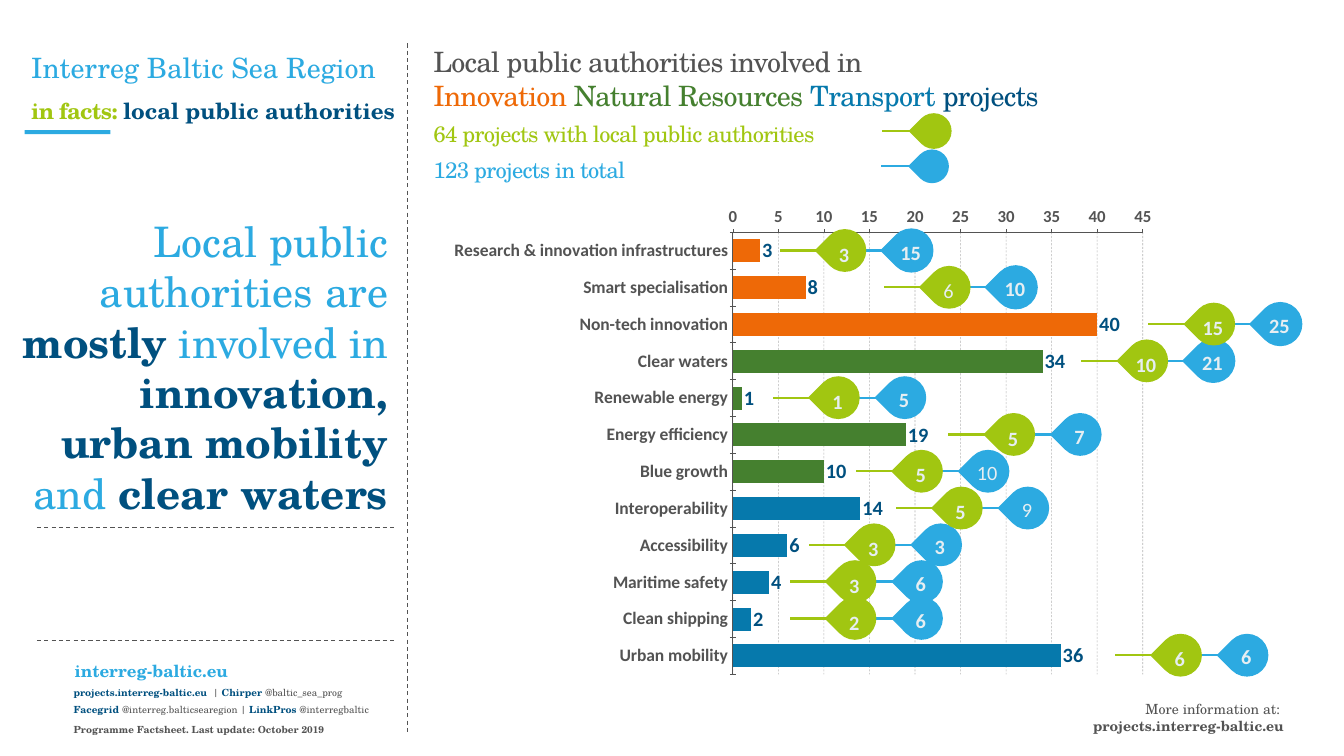
from lxml.etree import SubElement
from pptx import Presentation
from pptx.chart.data import CategoryChartData
from pptx.dml.color import RGBColor
from pptx.enum.chart import XL_CHART_TYPE, XL_LABEL_POSITION, XL_TICK_MARK
from pptx.enum.dml import MSO_LINE
from pptx.enum.shapes import MSO_CONNECTOR, MSO_SHAPE
from pptx.enum.text import MSO_ANCHOR, MSO_AUTO_SIZE, PP_ALIGN
from pptx.oxml import parse_xml
from pptx.oxml.ns import nsdecls, qn
from pptx.util import Inches, Pt

SKY = RGBColor(0x2C, 0xAA, 0xE1)
NAVY = RGBColor(0x00, 0x50, 0x7F)
GREY = RGBColor(0x53, 0x53, 0x53)
LIME = RGBColor(0xA1, 0xC6, 0x11)
ORANGE = RGBColor(0xEE, 0x69, 0x07)
GREEN = RGBColor(0x45, 0x80, 0x2F)
BLUE = RGBColor(0x06, 0x79, 0xAC)
PALE = RGBColor(0xE6, 0xEE, 0xF2)
SERIF, SANS = "TeX Gyre Schola", "Calibri"
BREAK = None
ROWS = 15  # grid rows on the slide; columns are as wide as rows are high

# field, projects with authorities, projects in total, partners, colour, lime drop column
FIELDS = [
    ("Research & innovation infrastructures", 3, 15, 3, ORANGE, 16.34),
    ("Smart specialisation", 6, 10, 8, ORANGE, 18.41),
    ("Non-tech innovation", 15, 25, 40, ORANGE, 23.66),
    ("Clear waters", 10, 21, 34, GREEN, 22.33),
    ("Renewable energy", 1, 5, 1, GREEN, 16.21),
    ("Energy efficiency", 5, 7, 19, GREEN, 19.69),
    ("Blue growth", 5, 10, 10, GREEN, 17.86),
    ("Interoperability", 5, 9, 14, BLUE, 18.65),
    ("Accessibility", 3, 3, 6, BLUE, 16.92),
    ("Maritime safety", 3, 6, 4, BLUE, 16.54),
    ("Clean shipping", 2, 6, 2, BLUE, 16.54),
    ("Urban mobility", 6, 6, 36, BLUE, 23.0),
]
LIGHT = {(LIME, 1), (SKY, 6), (SKY, 7)}  # drops whose number is not bold
FIRST, PITCH = 4.97, 0.73
DROP, STEP = 0.85, 1.32


class Sheet:
    def __init__(self, deck):
        self.slide = deck.slides.add_slide(deck.slide_layouts[1])
        self.shapes = self.slide.shapes
        self.cell = deck.slide_height / ROWS

    def span(self, *cells):
        return [round(n * self.cell) for n in cells]

    def put(self, frame, lines, size, font=SERIF, align=PP_ALIGN.LEFT, lead=1.0,
            gap=0, inset=(0, 0), anchor=MSO_ANCHOR.TOP):
        """Each line is a list of (text, colour, bold, size, tracking) pieces or BREAK."""
        frame.word_wrap = True
        frame.auto_size = MSO_AUTO_SIZE.NONE
        frame.vertical_anchor = anchor
        frame.margin_left = frame.margin_right = Inches(inset[0])
        frame.margin_top = frame.margin_bottom = Inches(inset[1])
        for i, line in enumerate(lines):
            para = frame.add_paragraph() if i else frame.paragraphs[0]
            para.alignment, para.line_spacing = align, lead
            para.space_before = Pt(gap if i else 0)
            props = para._p.get_or_add_pPr()
            props.set("marL", "0")
            props.set("indent", "0")
            SubElement(props, qn("a:buNone"))
            para.font.name, para.font.size = font, Pt(size)
            for piece in line:
                if piece is BREAK:
                    para.add_line_break()
                else:
                    self.piece(para, *piece)

    def piece(self, para, text, color, bold=False, size=None, track=0):
        part = para.add_run()
        part.text = text
        part.font.color.rgb, part.font.bold = color, bold
        if size:
            part.font.size = Pt(size)
        if track:
            part.font._element.set("spc", str(track * 100))

    def text(self, box, lines, size, **style):
        self.put(self.shapes.add_textbox(*self.span(*box)).text_frame, lines, size, **style)

    def hold(self, index, box, lines, size, **style):
        """Move and fill a placeholder of the layout."""
        shape = self.slide.placeholders[index]
        shape.left, shape.top, shape.width, shape.height = self.span(*box)
        self.put(shape.text_frame, lines, size, **style)

    def line(self, ends, color, width, dash=None):
        line = self.shapes.add_connector(MSO_CONNECTOR.STRAIGHT, *self.span(*ends))
        line.line.color.rgb, line.line.width = color, Pt(width)
        if dash:
            line.line.dash_style = dash
        SubElement(line._element.spPr, qn("a:effectLst"))

    def shape(self, kind, box, color, edge=False):
        shape = self.shapes.add_shape(kind, *self.span(*box))
        shape.shadow.inherit = False
        shape.fill.solid()
        shape.fill.fore_color.rgb = color
        if edge:
            shape.line.color.rgb, shape.line.width = color, Pt(2)
        else:
            shape.line.fill.background()
        return shape

    def drop(self, left, mid, size, tail, color, edge=False):
        """Teardrop pointing left, with a stem of length tail."""
        self.line((left + 0.02, mid, left - tail, mid), color, 3.25)
        box = (left, mid - size / 2, size, size)
        self.shape(MSO_SHAPE.TEAR, box, color, edge).rotation = 225

    def chart(self, box, plot):
        data = CategoryChartData()
        data.categories = [field[0] for field in FIELDS]
        data.add_series("Series 1", [field[3] for field in FIELDS])
        chart = self.shapes.add_chart(XL_CHART_TYPE.BAR_CLUSTERED, *self.span(*box), data).chart
        chart.has_legend = chart.has_title = False
        chart.font.name, chart.font.size, chart.font.bold = SANS, Pt(14), True
        chart.font.color.rgb = SKY
        area = chart._chartSpace.chart.plotArea
        for old in area.findall(qn("c:layout")):
            area.remove(old)
        marks = "".join(f'<c:{k} val="{v}"/>' for k, v in zip("xywh", plot))
        area.insert(0, parse_xml(
            f'<c:layout {nsdecls("c")}><c:manualLayout><c:layoutTarget val="inner"/>'
            f'<c:xMode val="edge"/><c:yMode val="edge"/>{marks}</c:manualLayout></c:layout>'))

        cats, vals = chart.category_axis, chart.value_axis
        for axis, size, width, tick in ((cats, 25, 1, XL_TICK_MARK.CROSS),
                                        (vals, 24, 0.75, XL_TICK_MARK.OUTSIDE)):
            axis.major_tick_mark, axis.minor_tick_mark = tick, XL_TICK_MARK.NONE
            font, line = axis.tick_labels.font, axis.format.line
            font.size, font.bold, font.color.rgb = Pt(size), True, GREY
            line.color.rgb, line.width = GREY, Pt(width)
        cats.reverse_order = True
        vals.minimum_scale, vals.maximum_scale, vals.major_unit = 0, 45, 5
        vals.tick_labels.number_format = "0"
        vals.tick_labels.number_format_is_linked = False
        grid = vals.major_gridlines.format.line
        grid.color.rgb, grid.width, grid.dash_style = GREY, Pt(0.75), MSO_LINE.DASH
        tint = vals._element.xpath("c:majorGridlines//a:srgbClr")[0]
        SubElement(tint, qn("a:alpha")).set("val", "43000")

        bars = chart.plots[0]
        bars.gap_width, bars.overlap, bars.vary_by_categories = 60, -33, False
        for i, field in enumerate(FIELDS):
            fill = bars.series[0].points[i].format.fill
            fill.solid()
            fill.fore_color.rgb = field[4]
        bars.has_data_labels = True
        labels = bars.data_labels
        labels.show_value, labels.position = True, XL_LABEL_POSITION.OUTSIDE_END
        labels.font.size, labels.font.bold, labels.font.color.rgb = Pt(29), True, NAVY

    def series(self, color, column, shift, tail, rise):
        """One numbered drop for each field."""
        for i, field in enumerate(FIELDS):
            left, mid = field[5] + shift, FIRST + i * PITCH
            self.drop(left, mid, DROP, tail, color, color == SKY and i < 4)
            label = (str(field[column]), PALE, (color, i) not in LIGHT)
            self.text((left - 0.09, mid - rise, 1, 0.45), [[label]], 29, font=SANS,
                      align=PP_ALIGN.CENTER, lead=1.1, inset=(0.24, 0.12))


def main():
    deck = Presentation()
    deck.slide_width, deck.slide_height = Inches(26.67), Inches(15)
    sheet = Sheet(deck)

    sheet.line((8.08, 0.86, 8.08, 14.53), GREY, 1.5, MSO_LINE.DASH)
    for row in (10.47, 12.7):
        sheet.line((0.73, row, 7.83, row), GREY, 1.5, MSO_LINE.DASH)
    sheet.chart((8.27, 3.97, 17.57, 10.33), (0.357, 0.062, 0.463, 0.849))

    sheet.hold(0, (0.52, 0.61, 7.55, 1.88), [[
        ("Interreg Baltic Sea Region", SKY), BREAK,
        ("in facts: ", LIME, True, 32, -1), ("local public authorities", NAVY, True, 32),
    ]], 40, lead=1.5, inset=(0.1, 0.05))
    sheet.shape(MSO_SHAPE.RECTANGLE, (0.49, 2.58, 1.7, 0.08), SKY)
    sheet.text((0, 4.75, 8.09, 5.72), [[
        ("Local public authorities are ", SKY), ("mostly ", NAVY, True),
        ("involved in", SKY), (" innovation, urban mobility ", NAVY, True),
        ("and", SKY), (" clear waters", NAVY, True),
    ]], 60, align=PP_ALIGN.RIGHT, inset=(0.39, 0.2), anchor=MSO_ANCHOR.BOTTOM)

    sheet.hold(1, (8.6, 0.89, 16.53, 2.39), [
        [("Local public authorities involved in", GREY, False, 40, -1), BREAK,
         ("Innovation ", ORANGE, False, 40, -1), ("Natural Resources ", GREEN, False, 40, -1),
         ("Transport ", BLUE, False, 40, -1), ("projects", NAVY, False, 40, -1)],
        [("64 projects with local public authorities", LIME, False, 32, -1)],
        [("123 projects in total", SKY, False, 32, -1)],
    ], 40, gap=12)
    sheet.drop(18.19, 2.6, 0.68, 0.69, LIME, True)
    sheet.drop(18.16, 3.3, 0.67, 0.67, SKY)

    sheet.series(SKY, 2, STEP, 1.24, 0.38)
    sheet.series(LIME, 1, 0, 0.87, 0.34)

    sheet.text((1.48, 12.98, 6.53, 0.53), [[("interreg-baltic.eu", SKY, True)]], 24, lead=1.3)
    sheet.text((1.46, 13.5, 6.37, 1.13), [
        [("projects.interreg-baltic.eu ", NAVY, True), (" | ", GREY), ("Chirper ", NAVY, True),
         ("@baltic_sea_prog", GREY), BREAK,
         ("Facegrid ", NAVY, True), ("@interreg.balticsearegion | ", GREY),
         ("LinkPros", NAVY, True), (" @interregbaltic", GREY)],
        [("Programme Factsheet. Last update: October 2019", GREY, True)],
    ], 14, lead=1.5, gap=3)
    sheet.text((18.38, 13.85, 7.2, 0.77), [
        [("More information at: ", GREY)], [("projects.interreg-baltic.eu", GREY, True)],
    ], 20, align=PP_ALIGN.RIGHT, inset=(0.1, 0.05))
    deck.save("out.pptx")


if __name__ == "__main__":
    main()
